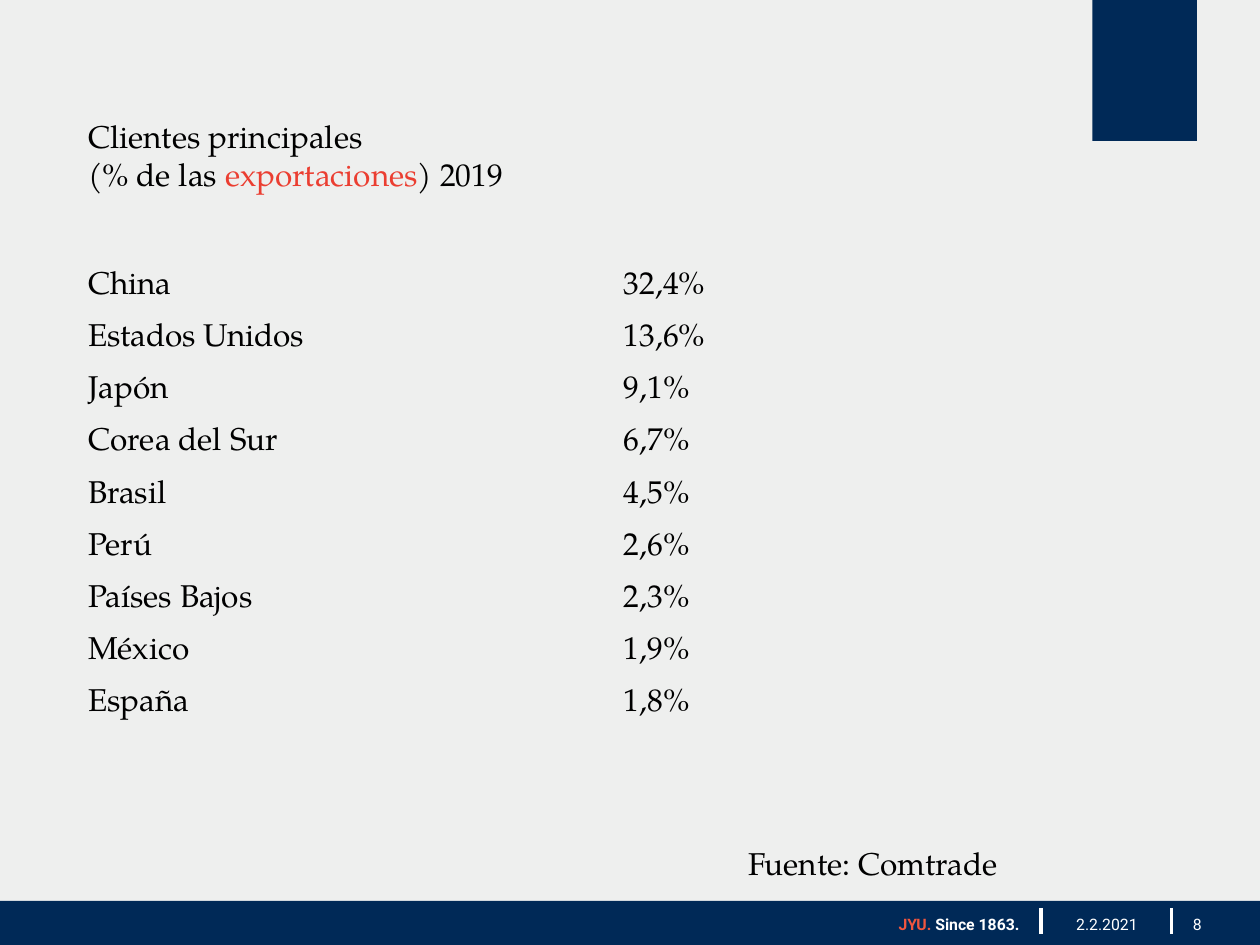
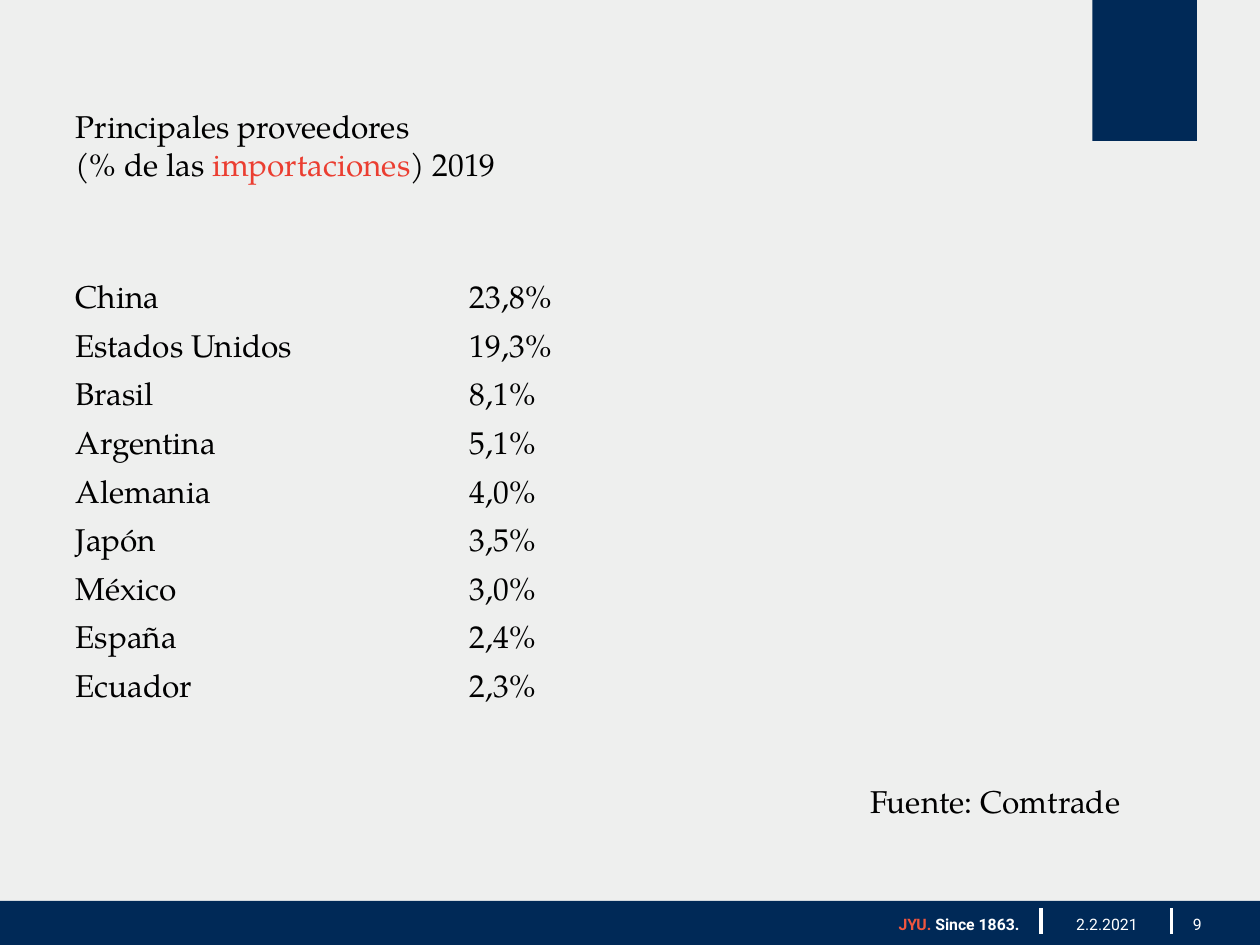
from pptx import Presentation
from pptx.dml.color import RGBColor
from pptx.enum.shapes import MSO_CONNECTOR as Connector, MSO_SHAPE as Shape
from pptx.enum.text import MSO_ANCHOR as Anchor, PP_ALIGN as Align
from pptx.oxml.ns import qn
from pptx.util import Cm, Pt
from lxml import etree

COLORS = {
    "background": "EEEFEE",
    "navy": "002957",
    "white": "FFFFFF",
    "black": "000000",
    "accent": "EB3E31",
    "brand": "F1563F",
}
SERIF, SANS = "TeX Gyre Pagella", "Roboto"
NO_GRID_STYLE = "{2D5ABB26-0587-4C30-8999-92F81FD0307C}"
TITLE_ONLY = 5
DATE = "2.2.2021"
SOURCE = "Fuente: Comtrade"

CLIENTS = [
    ("China", "32,4%"), ("Estados Unidos", "13,6%"), ("Japón", "9,1%"),
    ("Corea del Sur", "6,7%"), ("Brasil", "4,5%"), ("Perú", "2,6%"),
    ("Países Bajos", "2,3%"), ("México", "1,9%"), ("España", "1,8%"),
]
SUPPLIERS = [
    ("China", "23,8%"), ("Estados Unidos", "19,3%"), ("Brasil", "8,1%"),
    ("Argentina", "5,1%"), ("Alemania", "4,0%"), ("Japón", "3,5%"),
    ("México", "3,0%"), ("España", "2,4%"), ("Ecuador", "2,3%"),
]


def rgb(name):
    return RGBColor.from_string(COLORS[name])


def style_font(font, color="black", size=18, face=SERIF, bold=False):
    font.name, font.size, font.bold = face, Pt(size), bold
    font.color.rgb = rgb(color)


def add_spans(para, spans, **style):
    """Append (text, colour) pieces to a paragraph."""
    for text, color in spans:
        span = para.add_run()
        span.text = text
        style_font(span.font, color, **style)


def add_block(page, left, top, width, height):
    block = page.shapes.add_shape(Shape.RECTANGLE, Cm(left), Cm(top), Cm(width), Cm(height))
    block.shadow.inherit = False
    block.fill.solid()
    block.fill.fore_color.rgb = rgb("navy")
    block.line.fill.background()


def add_divider(page, x):
    line = page.shapes.add_connector(Connector.STRAIGHT, Cm(x), Cm(18.31), Cm(x), Cm(18.82))
    line.line.color.rgb = rgb("white")
    line.line.width = Pt(2)
    etree.SubElement(line._element.spPr, qn("a:effectLst"))


def add_footer_text(page, left, width, spans, align=Align.LEFT, bold=False):
    box = page.shapes.add_textbox(Cm(left), Cm(18.31), Cm(width), Cm(0.51))
    frame = box.text_frame
    frame.word_wrap = True
    frame.vertical_anchor = Anchor.BOTTOM
    frame.margin_top = frame.margin_bottom = 0
    para = frame.paragraphs[0]
    para.alignment = align
    add_spans(para, spans, size=9, face=SANS, bold=bold)


def add_page(deck, number):
    """Add a page with the corner block and the footer band."""
    page = deck.slides.add_slide(deck.slide_layouts[TITLE_ONLY])
    add_block(page, 22.02, 0, 2.11, 2.84)
    add_block(page, 0, 18.16, 25.4, 0.89)
    for x in (23.62, 20.98):
        add_divider(page, x)
    motto = [("JYU. ", "brand"), ("Since 1863.", "white")]
    add_footer_text(page, 14.83, 5.97, motto, Align.RIGHT, bold=True)
    add_footer_text(page, 23.8, 1.27, [(str(number), "white")])
    add_footer_text(page, 21.16, 2.31, [(DATE, "white")], Align.CENTER)
    return page


def set_title(page, left, top, width, heading, flow):
    title = page.shapes.title
    title.left, title.top, title.width, title.height = Cm(left), Cm(top), Cm(width), Cm(1.8)
    frame = title.text_frame
    frame.vertical_anchor = Anchor.TOP
    frame.text = heading + "\n"
    first, second = frame.paragraphs
    style_font(first.runs[0].font)
    add_spans(second, [("(% de las ", "black"), (flow, "accent"), (") 2019", "black")])
    for para in frame.paragraphs:
        para.alignment = Align.LEFT


def add_share_table(page, left, top, widths, row_height, rows):
    """Add a plain two-column table of countries and shares."""
    frame = page.shapes.add_table(len(rows), len(widths), Cm(left), Cm(top),
                                  Cm(sum(widths)), Cm(row_height * len(rows)))
    table = frame.table
    table.first_row = table.horz_banding = False
    table._tbl.tblPr.find(qn("a:tableStyleId")).text = NO_GRID_STYLE
    for column, width in zip(table.columns, widths):
        column.width = Cm(width)
    for table_row, values in zip(table.rows, rows):
        table_row.height = Cm(row_height)
        for cell, value in zip(table_row.cells, values):
            cell.fill.background()
            cell.vertical_anchor = Anchor.TOP
            cell.margin_top, cell.margin_bottom = Cm(0.02), 0
            para = cell.text_frame.paragraphs[0]
            para.text = value
            style_font(para.font)
            for span in para.runs:
                style_font(span.font)
    return table


def add_source_box(page, left, top):
    box = page.shapes.add_textbox(Cm(left), Cm(top), Cm(5.64), Cm(1.02))
    box.text_frame.text = SOURCE
    style_font(box.text_frame.paragraphs[0].runs[0].font)


def main():
    deck = Presentation()
    deck.slide_width, deck.slide_height = Cm(25.4), Cm(19.05)
    background = deck.slide_master.background.fill
    background.solid()
    background.fore_color.rgb = rgb("background")

    # Export clients
    page = add_page(deck, 8)
    set_title(page, 1.52, 2.24, 17.53, "Clientes principales", "exportaciones")
    add_share_table(page, 1.52, 5.46, (10.8, 10.8), 1.05, CLIENTS)
    add_source_box(page, 14.83, 16.89)

    # Import suppliers, with the source in a taller last row
    page = add_page(deck, 9)
    set_title(page, 1.27, 2.03, 17.78, "Principales proveedores", "importaciones")
    table = add_share_table(page, 1.27, 5.74, (7.95, 16.18), 0.98,
                            SUPPLIERS + [("", SOURCE)])
    last_row = len(SUPPLIERS)
    table.rows[last_row].height = Cm(3.18)
    source_cell = table.cell(last_row, 1)
    source_cell.margin_left, source_cell.margin_top = Cm(8.32), Cm(1.38)

    deck.save("out.pptx")


if __name__ == "__main__":
    main()
